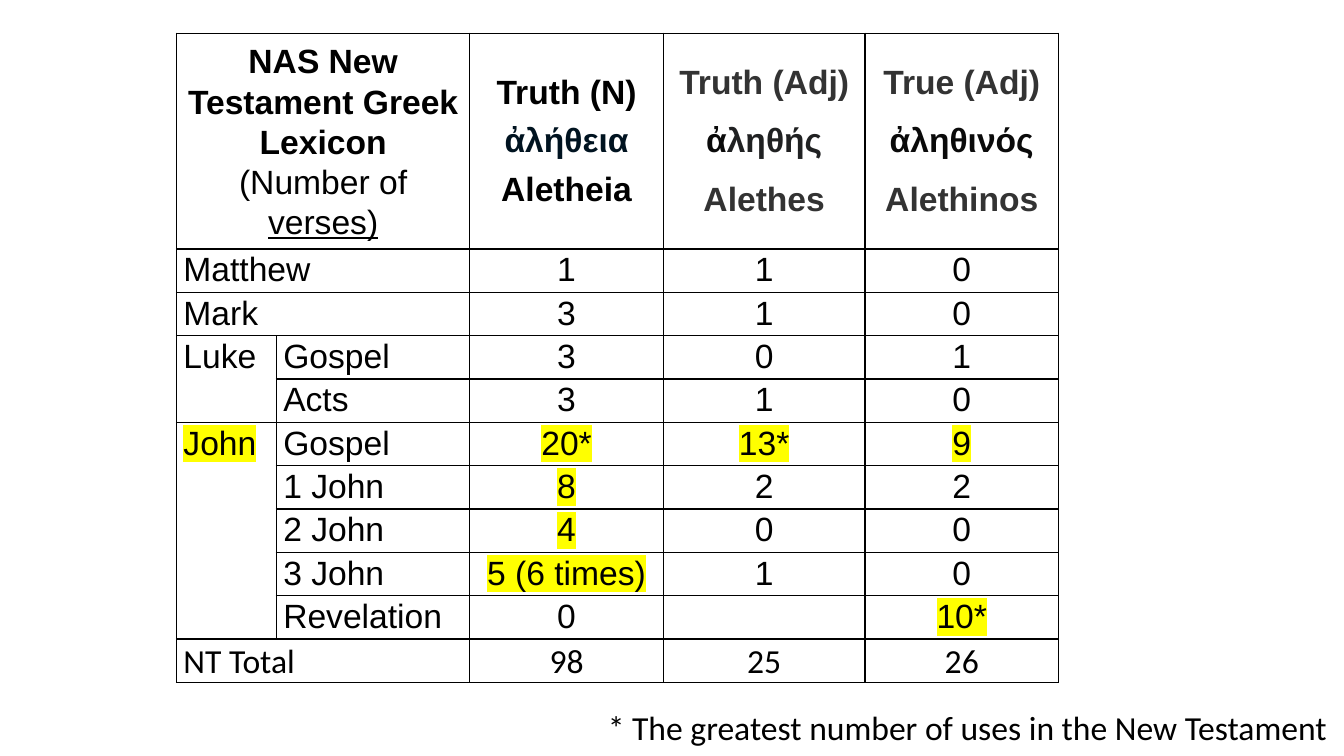
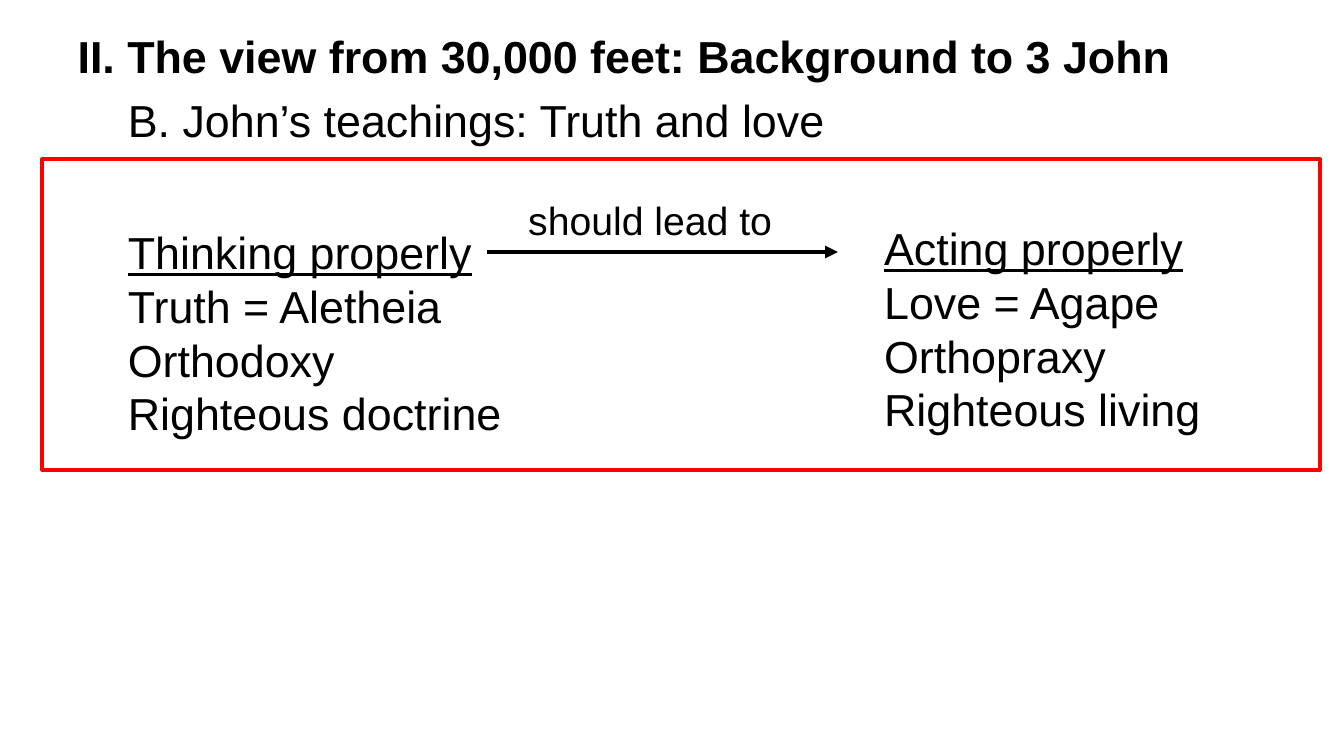
from dataclasses import dataclass, replace

from lxml import etree
from pptx import Presentation
from pptx.dml.color import RGBColor
from pptx.enum.shapes import MSO_CONNECTOR as Connector, MSO_SHAPE as Shape
from pptx.enum.text import MSO_ANCHOR as Anchor, PP_ALIGN as Align
from pptx.oxml.ns import qn
from pptx.util import Inches, Pt

TITLE_ONLY, BLANK = 5, 6


@dataclass(frozen=True)
class Theme:
    font: str = "Arial"
    note_font: str = "Calibri"
    black: str = "000000"
    navy: str = "001320"
    ink: str = "0A0A0A"
    charcoal: str = "202122"
    gray: str = "333333"
    red: str = "FF0000"
    yellow: str = "FFFF00"
    heading: int = 32
    label: int = 28
    table: int = 24
    rule: int = 3


@dataclass(frozen=True)
class Line:
    """One paragraph; each further span is (text, colour, underline)."""
    text: str
    size: int
    font: str = Theme.font
    color: str = Theme.black
    bold: bool = False
    underline: bool = False
    highlight: bool = False
    align: Align = Align.LEFT
    spacing: float = 1.0
    before: float = 0
    after: float = 0
    more: tuple = ()


class Slides:
    def __init__(self, theme):
        self.theme = theme
        self.deck = Presentation()
        self.deck.slide_width = Inches(13.33)
        self.deck.slide_height = Inches(7.5)
        self.page = None

    def add_page(self, layout):
        self.page = self.deck.slides.add_slide(self.deck.slide_layouts[layout])

    def set_lines(self, frame, lines):
        for index, line in enumerate(lines):
            para = frame.add_paragraph() if index else frame.paragraphs[0]
            para.alignment = line.align
            para.line_spacing = line.spacing
            para.space_before = Pt(line.before if index else 0)
            para.space_after = Pt(line.after)
            font = para.font
            font.name, font.size = line.font, Pt(line.size)
            font.bold, font.underline = line.bold, line.underline
            font.color.rgb = RGBColor.from_string(line.color)
            span = para.add_run()
            span.text = line.text
            if line.highlight:
                self.highlight(span)
            for text, color, underline in line.more:
                span = para.add_run()
                span.text = text
                span.font.color.rgb = RGBColor.from_string(color)
                span.font.underline = underline

    def highlight(self, span):
        mark = etree.SubElement(span._r.get_or_add_rPr(), qn("a:highlight"))
        etree.SubElement(mark, qn("a:srgbClr"), val=self.theme.yellow)

    def title(self, text, left, top, width, height):
        box = self.page.shapes.title
        box.left, box.top, box.width, box.height = map(Inches, (left, top, width, height))
        box.text_frame.vertical_anchor = Anchor.MIDDLE
        self.set_lines(box.text_frame,
                       [Line(text, self.theme.heading, bold=True, spacing=0.9)])

    def text(self, lines, left, top, width, height, wrap=True):
        box = self.page.shapes.add_textbox(*map(Inches, (left, top, width, height)))
        box.text_frame.word_wrap = wrap
        self.set_lines(box.text_frame, lines)

    def frame(self, left, top, width, height):
        box = self.page.shapes.add_shape(
            Shape.RECTANGLE, *map(Inches, (left, top, width, height)))
        box.shadow.inherit = False
        box.fill.background()
        box.line.color.rgb = RGBColor.from_string(self.theme.red)
        box.line.width = Pt(self.theme.rule)

    def arrow(self, left, right, y):
        arrow = self.page.shapes.add_connector(
            Connector.STRAIGHT, *map(Inches, (left, y, right, y)))
        arrow.line.color.rgb = RGBColor.from_string(self.theme.black)
        arrow.line.width = Pt(self.theme.rule)
        properties = arrow._element.spPr
        etree.SubElement(properties.find(qn("a:ln")), qn("a:tailEnd"), type="triangle")
        etree.SubElement(properties, qn("a:effectLst"))

    def table(self, left, top, widths, heights, merges):
        """Add an empty ruled table; merges holds (row, column, last row, last column)."""
        holder = self.page.shapes.add_table(
            len(heights), len(widths), Inches(left), Inches(top),
            Inches(sum(widths)), Inches(sum(heights)))
        table = holder.table
        table.first_row = table.horz_banding = False
        for column, width in zip(table.columns, widths):
            column.width = Inches(width)
        for row, height in zip(table.rows, heights):
            row.height = Inches(height)
        for cell in table.iter_cells():
            self.rule_cell(cell)
        for row, column, last_row, last_column in merges:
            table.cell(row, column).merge(table.cell(last_row, last_column))
        return table

    def rule_cell(self, cell):
        cell.margin_left = cell.margin_right = Inches(0.07)
        cell.margin_top = cell.margin_bottom = 0
        properties = cell._tc.get_or_add_tcPr()
        for side in ("lnL", "lnR", "lnT", "lnB"):
            border = etree.SubElement(properties, qn(f"a:{side}"), w=str(Pt(1)))
            fill = etree.SubElement(border, qn("a:solidFill"))
            etree.SubElement(fill, qn("a:srgbClr"), val=self.theme.black)
        cell.fill.background()


def lexicon_headers(theme):
    base = Line("", theme.table, bold=True, align=Align.CENTER)
    corner = replace(base, spacing=1.07)
    noun = replace(base, after=8)
    adjective = replace(base, color=theme.gray, before=7.5, after=7.5)
    return {
        0: [replace(corner, text="NAS New Testament Greek Lexicon"),
            replace(corner, text="(Number of ", bold=False,
                    more=(("verses)", theme.black, True),))],
        2: [replace(noun, text="Truth (N)"),
            replace(noun, text="ἀλήθεια", color=theme.navy),
            replace(noun, text="Aletheia")],
        3: [replace(adjective, text="Truth (Adj)"),
            replace(adjective, text="ἀ", color=theme.ink,
                    more=(("ληθής", theme.charcoal, False),)),
            replace(adjective, text="Alethes")],
        4: [replace(adjective, text="True (Adj)"),
            replace(adjective, text="ἀληθινός", color=theme.ink),
            replace(adjective, text="Alethinos")],
    }


def lexicon_page(slides):
    theme = slides.theme
    counts = [
        ("Matthew", "", "1", "1", "0"),
        ("Mark", "", "3", "1", "0"),
        ("Luke", "Gospel", "3", "0", "1"),
        ("", "Acts", "3", "1", "0"),
        ("John", "Gospel", "20*", "13*", "9"),
        ("", "1 John", "8", "2", "2"),
        ("", "2 John", "4", "0", "0"),
        ("", "3 John", "5 (6 times)", "1", "0"),
        ("", "Revelation", "0", "", "10*"),
        ("NT Total", "", "98", "25", "26"),
    ]
    highlighted = {(5, 0), (5, 2), (5, 3), (5, 4), (6, 2), (7, 2), (8, 2), (9, 4)}
    total_row = len(counts)
    merges = [(row, 0, row, 1) for row in (0, 1, 2, total_row)]
    merges += [(3, 0, 4, 0), (5, 0, 9, 0)]

    slides.add_page(BLANK)
    table = slides.table(1.75, 0.33, [0.99, 1.92, 1.92, 2, 1.92],
                         [2.14] + [0.43] * total_row, merges)
    for column, lines in lexicon_headers(theme).items():
        cell = table.cell(0, column)
        cell.vertical_anchor = Anchor.MIDDLE
        slides.set_lines(cell.text_frame, lines)
    for row, values in enumerate(counts, start=1):
        for column, value in enumerate(values):
            if value:
                line = Line(value, theme.table, spacing=1.07,
                            font=theme.note_font if row == total_row else theme.font,
                            align=Align.CENTER if column > 1 else Align.LEFT,
                            highlight=(row, column) in highlighted)
                slides.set_lines(table.cell(row, column).text_frame, [line])
    slides.text([Line("* The greatest number of uses in the New Testament",
                      theme.table, font=theme.note_font)],
                5.93, 6.96, 7.41, 0.5, wrap=False)


def teachings_page(slides):
    theme = slides.theme
    slides.add_page(TITLE_ONLY)
    slides.title("II. The view from 30,000 feet: Background to 3 John", 0.67, 0.25, 12, 0.68)
    slides.text([Line("B. John’s teachings: Truth and love", theme.heading, spacing=0.9)],
                1.17, 0.93, 11.5, 0.68)
    columns = [
        (8.67, 2.14, 4.25, ["Acting properly", "Love = Agape", "Orthopraxy",
                            "Righteous living"]),
        (1.17, 2.18, 4.5, ["Thinking properly", "Truth = Aletheia", "Orthodoxy",
                           "Righteous doctrine"]),
    ]
    for left, top, width, texts in columns:
        lines = [Line(text, theme.heading, underline=index == 0)
                 for index, text in enumerate(texts)]
        slides.text(lines, left, top, width, 2.25)
    slides.text([Line("should lead to", theme.label)], 5.14, 1.9, 3.05, 0.57)
    slides.arrow(4.83, 8.31, 2.5)
    slides.frame(0.42, 1.58, 12.67, 3.08)


def main():
    slides = Slides(Theme())
    lexicon_page(slides)
    teachings_page(slides)
    slides.deck.save("out.pptx")


if __name__ == "__main__":
    main()
